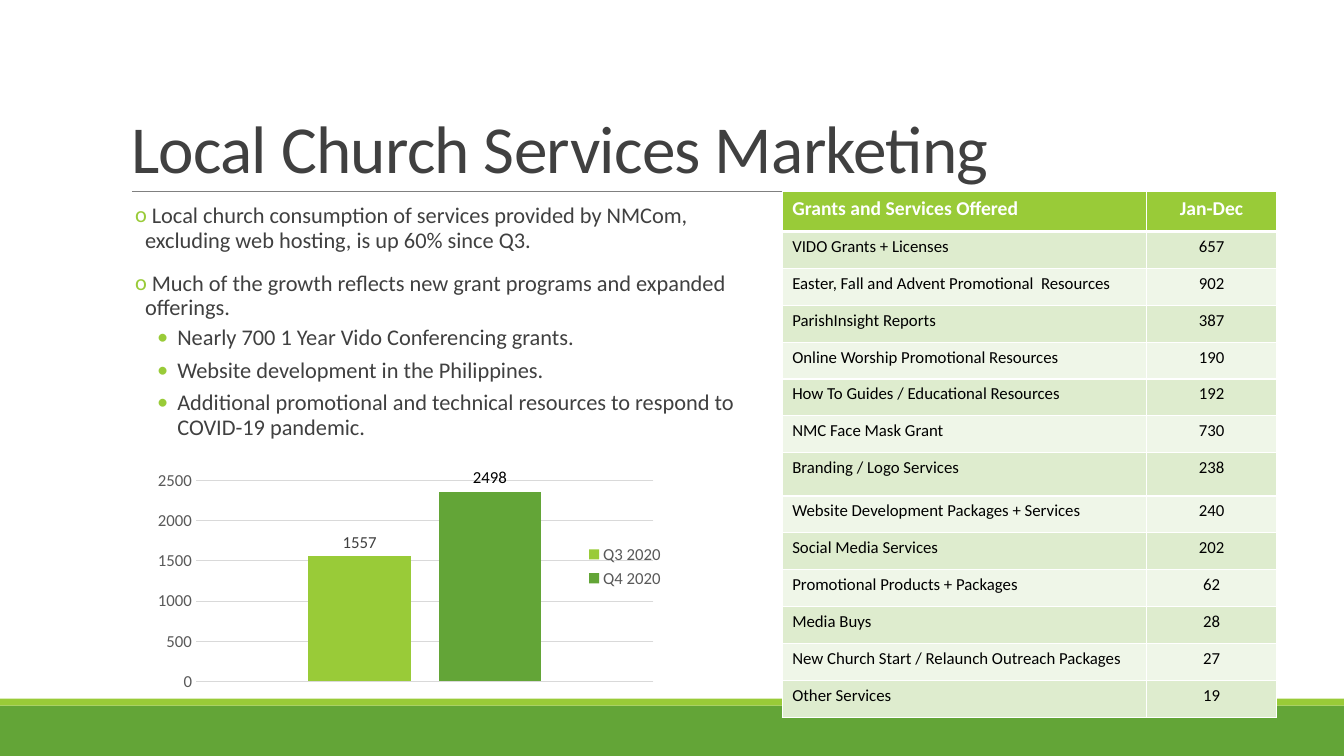
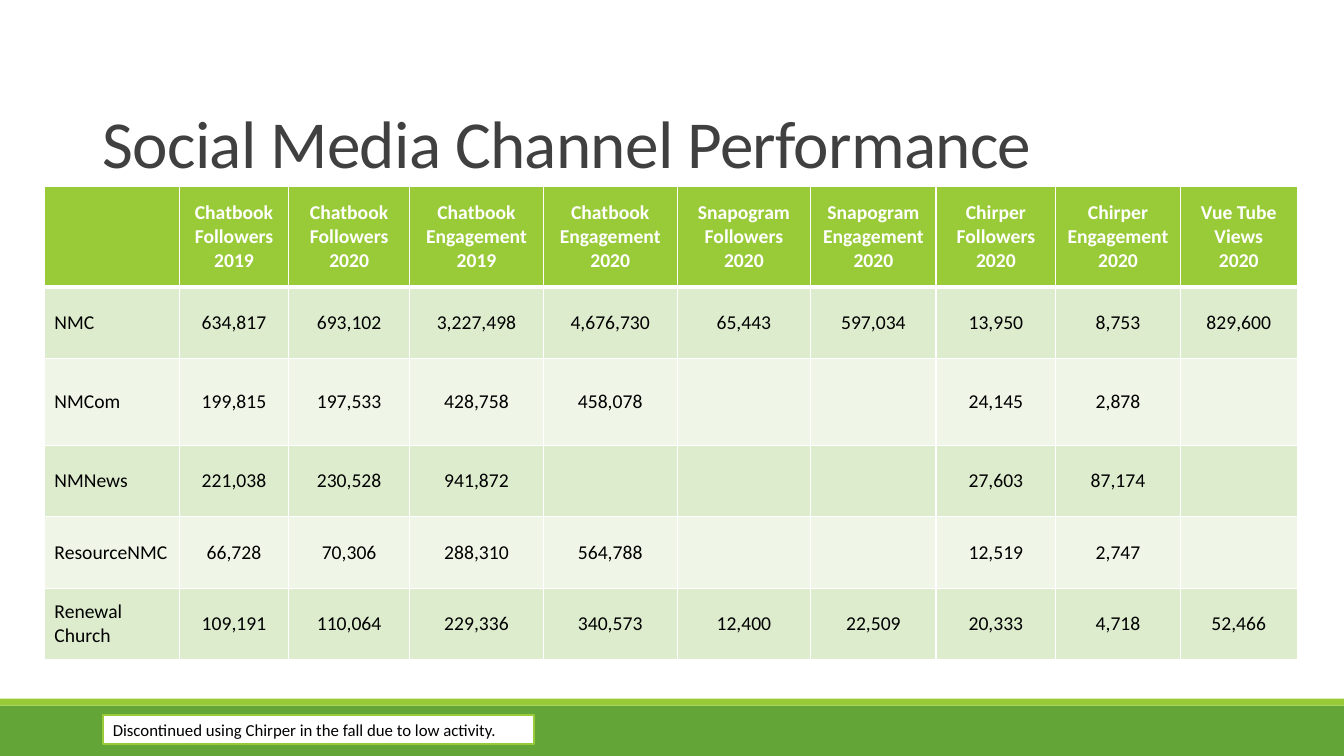
"""Builds two slides on church services marketing and social media performance."""
from lxml import etree
from pptx import Presentation
from pptx.chart.data import CategoryChartData
from pptx.dml.color import RGBColor
from pptx.enum import chart as ch, shapes, text
from pptx.oxml.ns import qn
from pptx.util import Pt

FONT = "Calibri"
COLORS = {
    "lime": "99CB38", "green": "63A537", "white": "FFFFFF", "black": "000000",
    "ink": "404040", "axis": "595959", "rule": "808080", "grid": "D9D9D9",
    "band_dark": "DEECCE", "band_light": "EFF6E8",
}
SLIDE_W, SLIDE_H = 960, 540

POINTS = [
    (0, " Local church consumption of services provided by NMCom, excluding web hosting, is up 60% since Q3."),
    (0, " Much of the growth reflects new grant programs and expanded offerings."),
    (1, "Nearly 700 1 Year Vido Conferencing grants."),
    (1, "Website development in the Philippines."),
    (1, "Additional promotional and technical resources to respond to COVID-19 pandemic."),
]
LEVELS = [
    {"bullet": "o", "margin": 7.2, "hang": 7.2, "before": 12, "after": 2},
    {"bullet": "•", "margin": 30.2, "hang": 14.4, "before": 2, "after": 4},
]
QUARTERS = [
    {"name": "Q3 2020", "value": 1557, "label": None, "fill": "lime", "text": "ink"},
    {"name": "Q4 2020", "value": 2363, "label": "2498", "fill": "green", "text": "black"},
]
SERVICES = [
    ("Grants and Services Offered", "Jan-Dec"),
    ("VIDO Grants + Licenses", "657"),
    ("Easter, Fall and Advent Promotional  Resources", "902"),
    ("ParishInsight Reports", "387"),
    ("Online Worship Promotional Resources", "190"),
    ("How To Guides / Educational Resources", "192"),
    ("NMC Face Mask Grant", "730"),
    ("Branding / Logo Services", "238"),
    ("Website Development Packages + Services", "240"),
    ("Social Media Services", "202"),
    ("Promotional Products + Packages", "62"),
    ("Media Buys", "28"),
    ("New Church Start / Relaunch Outreach Packages", "27"),
    ("Other Services", "19"),
]
SERVICE_COLS = [260.5, 92.5]
SERVICE_ROWS = [28.6] + [26.35] * 6 + [30.9] + [26.35] * 6

CHANNELS = [
    ("", "Chatbook Followers\n2019", "Chatbook Followers\n2020", "Chatbook Engagement\n2019",
     "Chatbook Engagement\n2020", "Snapogram Followers\n2020", "Snapogram Engagement\n2020",
     "Chirper Followers\n2020", "Chirper Engagement\n2020", "Vue Tube Views\n2020"),
    ("NMC", "634,817", "693,102", "3,227,498", "4,676,730", "65,443", "597,034", "13,950", "8,753", "829,600"),
    ("NMCom", "199,815", "197,533", "428,758", "458,078", "", "", "24,145", "2,878", ""),
    ("NMNews", "221,038", "230,528", "941,872", "", "", "", "27,603", "87,174", ""),
    ("ResourceNMC", "66,728", "70,306", "288,310", "564,788", "", "", "12,519", "2,747", ""),
    ("Renewal Church", "109,191", "110,064", "229,336", "340,573", "12,400", "22,509", "20,333", "4,718", "52,466"),
]
CHANNEL_COLS = [96.5, 78, 86.5, 95.5, 95.5, 95.5, 89.5, 85.5, 89, 83.5]
CHANNEL_ROWS = [72, 51, 62, 51, 51, 51]
NOTE = "Discontinued using Chirper in the fall due to low activity."


def rgb(name):
    return RGBColor.from_string(COLORS[name])


def style(font, size, color, bold=False):
    font.name, font.size, font.bold = FONT, Pt(size), bold
    font.color.rgb = rgb(color)


def place(shape, box):
    shape.left, shape.top, shape.width, shape.height = map(Pt, box)


def add_box(slide, box, fill, line=None):
    rect = slide.shapes.add_shape(shapes.MSO_SHAPE.RECTANGLE, *map(Pt, box))
    rect.shadow.inherit = False
    rect.fill.solid()
    rect.fill.fore_color.rgb = rgb(fill)
    if line:
        rect.line.color.rgb = rgb(line)
        rect.line.width = Pt(1.25)
    else:
        rect.line.fill.background()
    return rect


def add_slide(prs, layout, heading, box):
    slide = prs.slides.add_slide(prs.slide_layouts[layout])
    add_box(slide, (0, 504, SLIDE_W, 36), "green")
    add_box(slide, (0, 499, SLIDE_W, 5), "lime")
    rule = slide.shapes.add_connector(
        shapes.MSO_CONNECTOR.STRAIGHT, Pt(94.3), Pt(136.8), Pt(879), Pt(136.8))
    rule.line.color.rgb = rgb("rule")
    rule.line.width = Pt(0.5)
    etree.SubElement(rule._element.spPr, qn("a:effectLst"))

    title = slide.shapes.title
    place(title, box)
    frame = title.text_frame
    frame.text = heading
    frame.auto_size = text.MSO_AUTO_SIZE.NONE
    frame.vertical_anchor = text.MSO_ANCHOR.BOTTOM
    line = frame.paragraphs[0]
    line.alignment = text.PP_ALIGN.LEFT
    line.line_spacing = 0.85
    style(line.runs[0].font, 48, "ink")
    line.runs[0].font._element.set("spc", "-50")
    return slide


def set_bullet(paragraph, level):
    props = paragraph._p.get_or_add_pPr()
    props.set("marL", str(Pt(level["margin"])))
    props.set("indent", str(-Pt(level["hang"])))
    color = etree.SubElement(props, qn("a:buClr"))
    etree.SubElement(color, qn("a:srgbClr"), val=COLORS["lime"])
    etree.SubElement(props, qn("a:buFont"), typeface=FONT)
    etree.SubElement(props, qn("a:buChar"), char=level["bullet"])


def fill_points(body):
    place(body, (96.5, 142.5, 452, 191.5))
    frame = body.text_frame
    frame.auto_size = text.MSO_AUTO_SIZE.NONE
    frame.margin_left = frame.margin_right = 0
    frame.text = "\n".join(words for _, words in POINTS)
    for paragraph, (depth, _) in zip(frame.paragraphs, POINTS):
        level = LEVELS[depth]
        paragraph.level = depth
        paragraph.line_spacing = 0.9
        paragraph.space_before = Pt(level["before"])
        paragraph.space_after = Pt(level["after"])
        set_bullet(paragraph, level)
        style(paragraph.runs[0].font, 16, "ink")


def set_borders(cell, row):
    props = cell._tc.get_or_add_tcPr()
    widths = {"lnL": 1, "lnR": 1, "lnT": 3 if row == 1 else 1, "lnB": 3 if row == 0 else 1}
    for i, (side, width) in enumerate(widths.items()):
        border = etree.Element(qn(f"a:{side}"), w=str(Pt(width)))
        fill = etree.SubElement(border, qn("a:solidFill"))
        etree.SubElement(fill, qn("a:srgbClr"), val=COLORS["white"])
        props.insert(i, border)


def add_grid(slide, corner, cols, heights, rows, size, anchor):
    table = slide.shapes.add_table(
        len(rows), len(cols), *map(Pt, (*corner, sum(cols), sum(heights)))).table
    table.horz_banding = False
    for column, width in zip(table.columns, cols):
        column.width = Pt(width)
    for r, values in enumerate(rows):
        table.rows[r].height = Pt(heights[r])
        fill = "lime" if r == 0 else "band_dark" if r % 2 else "band_light"
        for c, value in enumerate(values):
            cell = table.cell(r, c)
            cell.fill.solid()
            cell.fill.fore_color.rgb = rgb(fill)
            set_borders(cell, r)
            cell.vertical_anchor = anchor
            cell.text = value
            for paragraph in cell.text_frame.paragraphs:
                paragraph.alignment = text.PP_ALIGN.CENTER if c else text.PP_ALIGN.LEFT
                for run in paragraph.runs:
                    style(run.font, size if r else 14, "black" if r else "white", r == 0)


def set_plot_area(chart, **fractions):
    area = chart._chartSpace.chart.plotArea
    for old in area.findall(qn("c:layout")):
        area.remove(old)
    layout = etree.Element(qn("c:layout"))
    manual = etree.SubElement(layout, qn("c:manualLayout"))
    settings = {"layoutTarget": "inner", "xMode": "edge", "yMode": "edge", **fractions}
    for tag, value in settings.items():
        etree.SubElement(manual, qn(f"c:{tag}"), val=str(value))
    area.insert(0, layout)


def add_quarters(slide):
    data = CategoryChartData()
    data.categories = ["1"]
    for quarter in QUARTERS:
        data.add_series(quarter["name"], [quarter["value"]])
    chart = slide.shapes.add_chart(
        ch.XL_CHART_TYPE.COLUMN_CLUSTERED, *map(Pt, (102, 299, 380, 211)), data).chart
    chart.has_title = False
    style(chart.font, 10, "black")
    set_plot_area(chart, x=0.1, y=0.21, w=0.86, h=0.68)
    chart.category_axis.visible = False

    axis = chart.value_axis
    axis.minimum_scale, axis.maximum_scale, axis.major_unit = 0, 2500, 500
    axis.major_tick_mark = axis.minor_tick_mark = ch.XL_TICK_MARK.NONE
    axis.format.line.fill.background()
    axis.major_gridlines.format.line.color.rgb = rgb("grid")
    axis.major_gridlines.format.line.width = Pt(0.75)
    style(axis.tick_labels.font, 12, "axis")

    chart.has_legend = True
    chart.legend.position = ch.XL_LEGEND_POSITION.RIGHT
    chart.legend.include_in_layout = False
    style(chart.legend.font, 12, "axis")

    plot = chart.plots[0]
    plot.gap_width, plot.overlap, plot.vary_by_categories = 219, -27, False
    for series, quarter in zip(plot.series, QUARTERS):
        series.format.fill.solid()
        series.format.fill.fore_color.rgb = rgb(quarter["fill"])
        labels = series.data_labels
        labels.show_value = True
        labels.position = ch.XL_LABEL_POSITION.OUTSIDE_END
        style(labels.font, 12, quarter["text"])
        if quarter["label"]:
            label = series.points[0].data_label
            label.text_frame.text = quarter["label"]
            label.position = ch.XL_LABEL_POSITION.OUTSIDE_END
            style(label.text_frame.paragraphs[0].runs[0].font, 12, quarter["text"])


def add_note(slide):
    note = add_box(slide, (73.5, 510.5, 308, 21), "white", "lime")
    frame = note.text_frame
    frame.word_wrap = True
    frame.vertical_anchor = text.MSO_ANCHOR.MIDDLE
    frame.text = NOTE
    frame.paragraphs[0].alignment = text.PP_ALIGN.LEFT
    style(frame.paragraphs[0].runs[0].font, 12, "black")


def main():
    prs = Presentation()
    prs.slide_width, prs.slide_height = Pt(SLIDE_W), Pt(SLIDE_H)

    marketing = add_slide(prs, 1, "Local Church Services Marketing", (86.5, 22.5, 792, 114.5))
    fill_points(marketing.placeholders[1])
    add_grid(marketing, (558.7, 136.8), SERVICE_COLS, SERVICE_ROWS, SERVICES, 12, text.MSO_ANCHOR.TOP)
    add_quarters(marketing)

    social = add_slide(prs, 5, "Social Media Channel Performance", (66, 29, 837.5, 104.5))
    add_grid(social, (31.7, 133.2), CHANNEL_COLS, CHANNEL_ROWS, CHANNELS, 14, text.MSO_ANCHOR.MIDDLE)
    add_note(social)

    prs.save("out.pptx")


if __name__ == "__main__":
    main()
